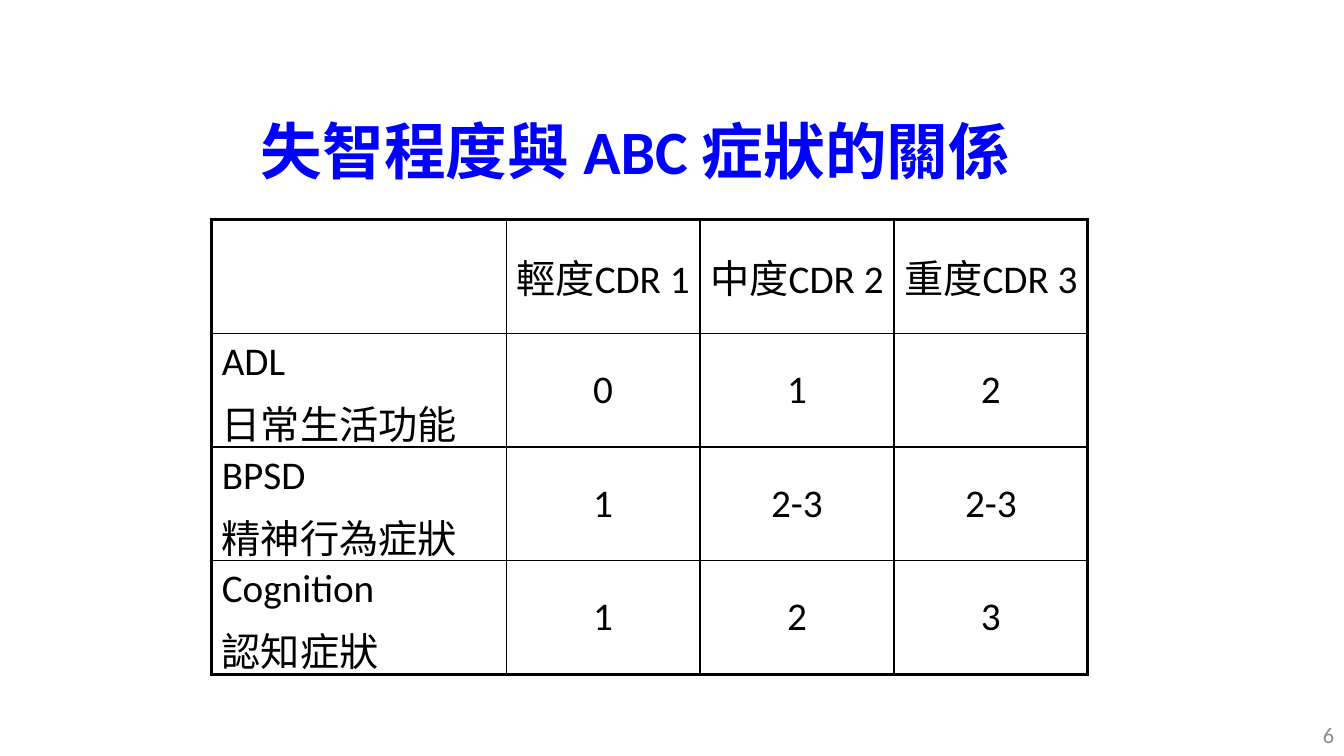
from dataclasses import dataclass

from lxml.etree import SubElement
from pptx import Presentation
from pptx.dml.color import RGBColor
from pptx.enum.text import MSO_ANCHOR, PP_ALIGN
from pptx.oxml.ns import qn
from pptx.util import Inches, Pt


@dataclass(frozen=True)
class Theme:
    font: str = "Calibri"
    title_color: str = "0000FF"
    text_color: str = "000000"
    number_color: str = "8C8C8C"
    cell_color: str = "FFFFFF"
    title_size: float = 44
    table_size: float = 28
    number_size: float = 16
    paragraph_gap: float = 5.6
    outer_line: float = 2.25
    inner_line: float = 1


THEME = Theme()
SYMPTOM_ROWS = [
    ["", "輕度CDR 1", "中度CDR 2", "重度CDR 3"],
    ["ADL\n日常生活功能", "0", "1", "2"],
    ["BPSD\n精神行為症狀", "1", "2-3", "2-3"],
    ["Cognition\n認知症狀", "1", "2", "3"],
]
LABEL_SHARE = 0.336


def add_span(para, text, size, color, bold=False):
    span = para.add_run()
    span.text = text
    span.font.name = THEME.font
    span.font.size = Pt(size)
    span.font.bold = bold
    span.font.color.rgb = RGBColor.from_string(color)


def add_line_of_text(page, box, text, size, color, align, bold=False):
    frame = page.shapes.add_textbox(*map(Inches, box)).text_frame
    frame.word_wrap = True
    frame.vertical_anchor = MSO_ANCHOR.MIDDLE
    para = frame.paragraphs[0]
    para.alignment = align
    para.line_spacing = 0.9
    add_span(para, text, size, color, bold)


def add_title(page, box):
    add_line_of_text(page, box, "失智程度與 ABC 症狀的關係", THEME.title_size,
                     THEME.title_color, PP_ALIGN.LEFT, bold=True)


def add_page_number(page, box):
    add_line_of_text(page, box, "6", THEME.number_size,
                     THEME.number_color, PP_ALIGN.RIGHT)


def set_borders(cell, outer_sides):
    """Draw all four sides, thicker on those at the table's edge."""
    properties = cell._tc.get_or_add_tcPr()
    for side in "LRTB":
        width = THEME.outer_line if side in outer_sides else THEME.inner_line
        line = SubElement(properties, qn(f"a:ln{side}"), w=str(Pt(width)))
        fill = SubElement(line, qn("a:solidFill"))
        SubElement(fill, qn("a:srgbClr"), val=THEME.text_color)


def fill_cell(cell, text, is_label):
    cell.fill.solid()
    cell.fill.fore_color.rgb = RGBColor.from_string(THEME.cell_color)
    cell.vertical_anchor = MSO_ANCHOR.TOP if is_label else MSO_ANCHOR.MIDDLE
    frame = cell.text_frame
    for index, line in enumerate(text.split("\n")):
        para = frame.add_paragraph() if index else frame.paragraphs[0]
        para.alignment = PP_ALIGN.LEFT if is_label else PP_ALIGN.CENTER
        if index:
            para.space_before = Pt(THEME.paragraph_gap)
        if line:
            add_span(para, line, THEME.table_size, THEME.text_color)


def add_symptom_table(page, box):
    row_count, column_count = len(SYMPTOM_ROWS), len(SYMPTOM_ROWS[0])
    table = page.shapes.add_table(row_count, column_count, *map(Inches, box)).table
    table.first_row = table.horz_banding = False
    width, height = box[2:]
    label_width = width * LABEL_SHARE
    grade_width = (width - label_width) / (column_count - 1)
    for index, column in enumerate(table.columns):
        column.width = Inches(grade_width if index else label_width)
    for row in table.rows:
        row.height = Inches(height / row_count)
    for row, texts in enumerate(SYMPTOM_ROWS):
        for column, text in enumerate(texts):
            edges = {"L": column == 0, "R": column == column_count - 1,
                     "T": row == 0, "B": row == row_count - 1}
            cell = table.cell(row, column)
            set_borders(cell, [side for side, outer in edges.items() if outer])
            fill_cell(cell, text, is_label=column == 0)


def main():
    deck = Presentation()
    deck.slide_width, deck.slide_height = Inches(13.33), Inches(7.5)
    page = deck.slides.add_slide(deck.slide_layouts[6])
    add_title(page, (2.49, 0.91, 8.5, 1.25))
    add_symptom_table(page, (2.1, 2.18, 8.69, 4.51))
    add_page_number(page, (10.33, 7.1, 3, 0.4))
    deck.save("out.pptx")


if __name__ == "__main__":
    main()
